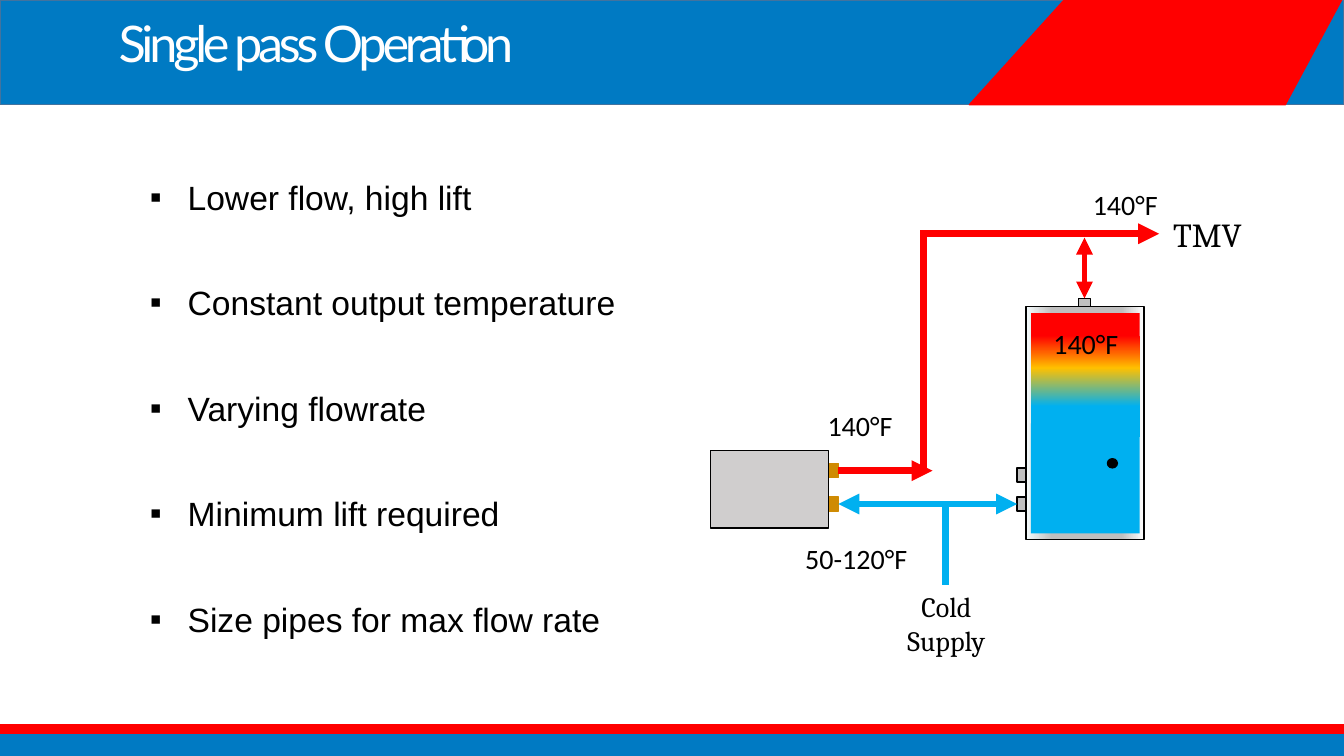
import pptx
import pptx.util
from lxml import etree
from pptx.dml.color import RGBColor
from pptx.enum.shapes import MSO_CONNECTOR, MSO_SHAPE
from pptx.enum.text import MSO_ANCHOR, PP_ALIGN
from pptx.oxml.ns import qn
from pptx.util import Cm, Pt

BLUE = RGBColor(0x00, 0x7A, 0xC3)
BANNER_EDGE = RGBColor(0x43, 0x73, 0x9E)
RED = RGBColor(0xFF, 0x00, 0x00)
COLD = RGBColor(0x00, 0xB0, 0xF0)
AMBER = RGBColor(0xFF, 0xC0, 0x00)
BRASS = RGBColor(0xCF, 0x8B, 0x03)
STEEL = RGBColor(0xBF, 0xBF, 0xBF)
FROST = RGBColor(0xF5, 0xFB, 0xFC)
CASING = RGBColor(0xD0, 0xCE, 0xCE)
BLACK = RGBColor(0x00, 0x00, 0x00)
WHITE = RGBColor(0xFF, 0xFF, 0xFF)

WIDTH, HEIGHT = 33.87, 19.05
BANNER_HEIGHT = 2.64
BANNER_ACCENT = [(33.81, 0), (32.39, BANNER_HEIGHT), (24.43, BANNER_HEIGHT), (26.82, 0)]

TITLE = "Single pass Operation"
POINTS = [
    "Lower flow, high lift",
    "Constant output temperature",
    "Varying flowrate",
    "Minimum lift required",
    "Size pipes for max flow rate",
]
# text, (left, top, width, height) in cm, font, size
LABELS = [
    ("Cold Supply", (22.02, 14.73, 3.66, 1.96), "Cambria", 20),
    ("TMV", (28.83, 5.26, 3.2, 1.27), "Cambria", 24),
    ("140°F", (20.47, 10.16, 2.41, 1.12), "Calibri", 20),
    ("140°F", (26.26, 8.1, 2.21, 1.12), "Calibri", 20),
    ("50-120°F", (19.66, 13.51, 3.84, 1.12), "Calibri", 20),
    ("140°F", (27.28, 4.6, 2.16, 1.12), "Calibri", 20),
]
FITTING = (0.48, 0.36)
HOT_Y, COLD_Y = 11.86, 12.7
MAIN_Y, RISER_X, FEED_X = 5.89, 23.27, 23.83
TANK = (25.86, 7.72, 2.97, 5.87)
HOT_STOPS = [(18, RED), (44, AMBER), (75, COLD)]
TANK_STOPS = [(0, FROST), (22, STEEL), (81, STEEL), (100, WHITE)]


def add_block(page, place, fill, line=None, kind=MSO_SHAPE.RECTANGLE):
    shape = page.shapes.add_shape(kind, *map(Cm, place))
    paint(shape, fill, line)
    return shape


def paint(shape, fill, line):
    shape.shadow.inherit = False
    shape.fill.solid()
    shape.fill.fore_color.rgb = fill
    if line is None:
        shape.line.fill.background()
    else:
        shape.line.color.rgb = line
        shape.line.width = Pt(1)


def set_gradient(shape, stops, angle):
    """Fill with (percent, colour) stops; the angle runs counter-clockwise."""
    shape.fill.gradient()
    shape.fill.gradient_angle = angle
    stop_list = next(shape._element.iter(qn("a:gsLst")))
    for old in list(stop_list):
        stop_list.remove(old)
    for percent, color in stops:
        stop = etree.SubElement(stop_list, qn("a:gs"), pos=str(percent * 1000))
        etree.SubElement(stop, qn("a:srgbClr"), val=str(color))


def add_pipe(page, start, end, color, width=5, head=False, tail=False):
    pipe = page.shapes.add_connector(MSO_CONNECTOR.STRAIGHT, *map(Cm, start + end))
    pipe.line.color.rgb = color
    pipe.line.width = Pt(width)
    outline = pipe.line._get_or_add_ln()
    for tag, wanted in (("a:headEnd", head), ("a:tailEnd", tail)):
        if wanted:
            etree.SubElement(outline, qn(tag), type="triangle")
    etree.SubElement(pipe._element.spPr, qn("a:effectLst"))
    return pipe


def add_text(page, lines, place, font, size, color=BLACK, align=PP_ALIGN.LEFT,
             anchor=MSO_ANCHOR.TOP, wrap=True, spacing=None, before=0,
             tracking=None, bullet=None):
    box = page.shapes.add_textbox(*map(Cm, place))
    frame = box.text_frame
    frame.word_wrap = wrap
    frame.vertical_anchor = anchor
    for index, line in enumerate(lines):
        para = frame.paragraphs[0] if index == 0 else frame.add_paragraph()
        para.alignment = align
        if spacing:
            para.line_spacing = spacing
        if index and before:
            para.space_before = Pt(before)
        if bullet:
            props = para._p.get_or_add_pPr()
            props.set("marL", str(Cm(2.22)))
            props.set("indent", str(Cm(-0.95)))
            etree.SubElement(props, qn("a:buFont"), typeface="Arial")
            etree.SubElement(props, qn("a:buChar"), char=bullet)
        span = para.add_run()
        span.text = line
        span.font.name = font
        span.font.size = Pt(size)
        span.font.color.rgb = color
        if tracking:
            span._r.get_or_add_rPr().set("spc", str(tracking * 100))


def add_frame(page):
    add_block(page, (0, 0, WIDTH, BANNER_HEIGHT), BLUE, BANNER_EDGE)
    corners = [(Cm(x), Cm(y)) for x, y in BANNER_ACCENT]
    builder = page.shapes.build_freeform(*corners[0])
    builder.add_line_segments(corners[1:], close=True)
    paint(builder.convert_to_shape(), RED, RED)
    add_block(page, (0, 18.49, WIDTH, 0.56), BLUE, BLUE)
    add_block(page, (0, 18.26, WIDTH, 0.23), RED, RED)


def add_diagram(page):
    neck = add_block(page, (27.18, 7.52, 0.3, 0.41), STEEL, BLACK)
    fittings = {}
    for side, left, center, fill, line in [
        ("tank hot", 25.63, 11.97, STEEL, BLACK),
        ("tank cold", 25.63, COLD_Y, STEEL, BLACK),
        ("pump hot", 20.65, HOT_Y, BRASS, BRASS),
        ("pump cold", 20.65, COLD_Y, BRASS, BRASS),
    ]:
        place = (left, center - FITTING[1] / 2) + FITTING
        fittings[side] = add_block(page, place, fill, line)
    add_block(page, (17.91, 11.35, 2.97, 1.96), CASING, BLACK)

    set_gradient(add_block(page, TANK, STEEL, BLACK), TANK_STOPS, 0)
    add_block(page, (25.98, 10.67, 2.74, 2.77), COLD)
    set_gradient(add_block(page, (25.98, 7.9, 2.74, 3.12), RED), HOT_STOPS, 270)
    add_block(page, (27.91, 11.56, 0.25, 0.23), BLACK, BLACK, MSO_SHAPE.OVAL)

    add_pipe(page, (23.19, MAIN_Y), (29.21, MAIN_Y), RED, tail=True)
    add_pipe(page, (RISER_X, HOT_Y), (RISER_X, MAIN_Y), RED)
    outlet = add_pipe(page, (21.13, HOT_Y), (23.5, HOT_Y), RED, tail=True)
    outlet.begin_connect(fittings["pump hot"], 3)
    inlet = add_pipe(page, (21.13, COLD_Y), (25.63, COLD_Y), COLD, head=True, tail=True)
    inlet.begin_connect(fittings["pump cold"], 3)
    inlet.end_connect(fittings["tank cold"], 1)
    add_pipe(page, (FEED_X, COLD_Y), (FEED_X, 14.73), COLD)
    draw = add_pipe(page, (27.33, 7.52), (27.33, 5.99), RED, width=4, head=True, tail=True)
    draw.begin_connect(neck, 0)

    for text, place, font, size in LABELS:
        add_text(page, [text], place, font, size, align=PP_ALIGN.CENTER, wrap=" " in text)


def main():
    deck = pptx.Presentation()
    deck.slide_width, deck.slide_height = Cm(WIDTH), Cm(HEIGHT)
    page = deck.slides.add_slide(deck.slide_layouts[6])
    add_frame(page)
    add_text(page, [TITLE], (2.74, 0.36, 23.24, 2.01), "Lato", 36, color=WHITE,
             wrap=False, spacing=0.9, tracking=-3)
    add_text(page, POINTS, (2.26, 3.38, 14.3, 12.85), "Arial", 24,
             anchor=MSO_ANCHOR.BOTTOM, spacing=Pt(57.4), before=18, bullet="▪")
    add_diagram(page)
    deck.save("out.pptx")


if __name__ == "__main__":
    main()
